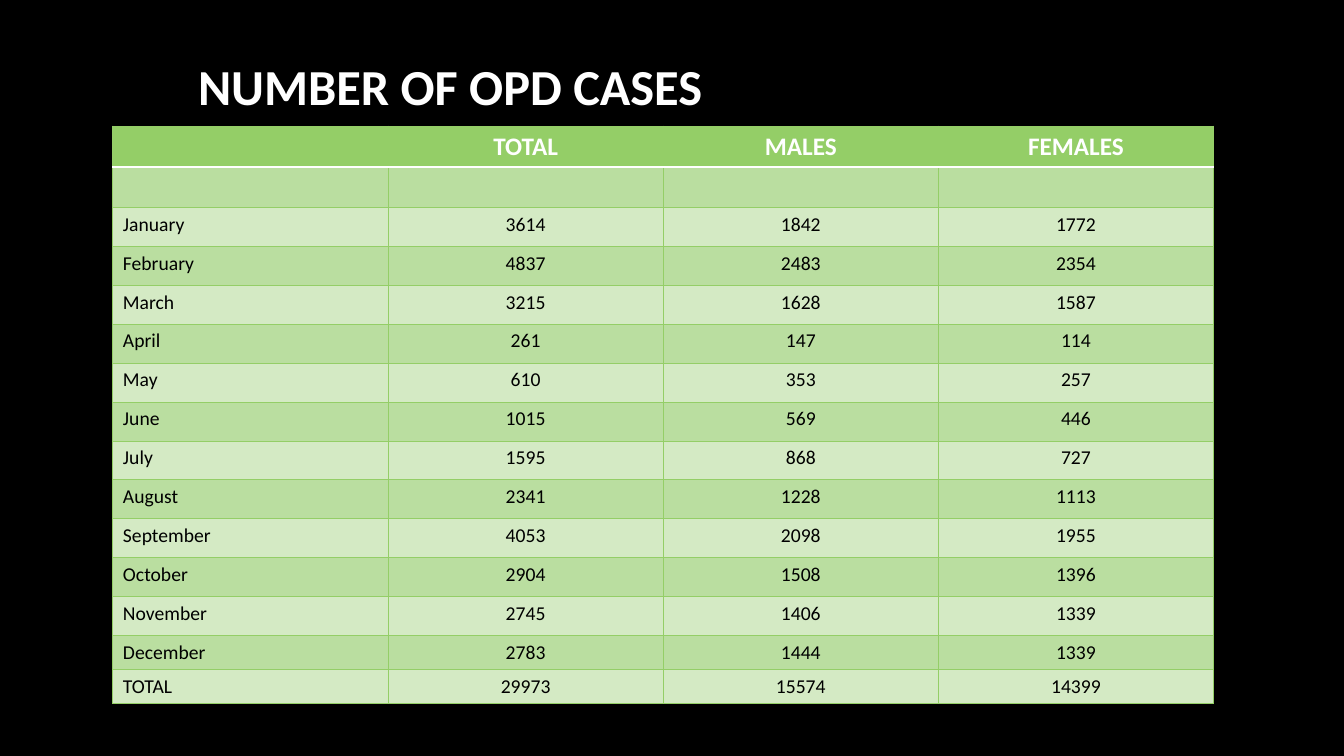
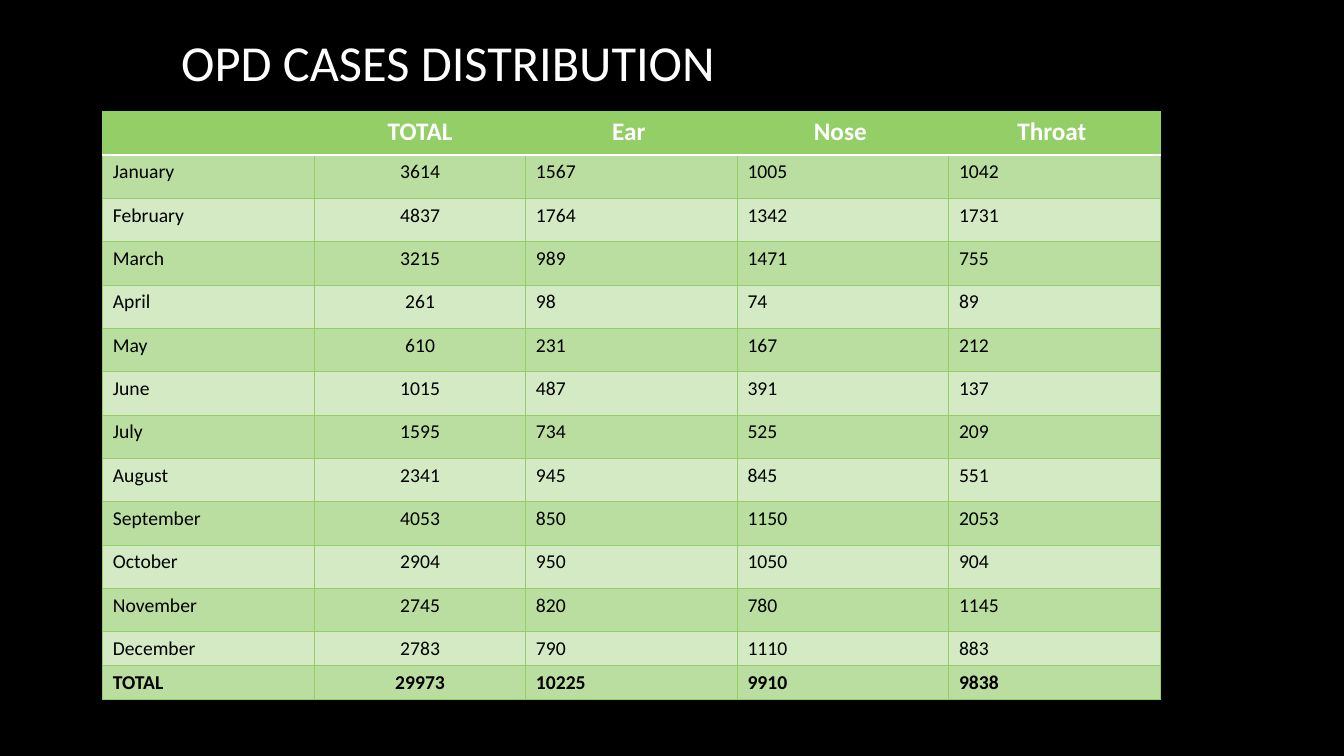
from lxml.etree import SubElement
from pptx import Presentation
from pptx.dml.color import RGBColor
from pptx.enum.text import MSO_ANCHOR as Anchor, PP_ALIGN as Align
from pptx.oxml.ns import qn
from pptx.util import Inches, Pt

MONTHS = ["January", "February", "March", "April", "May", "June", "July",
          "August", "September", "October", "November", "December"]
TOTALS = [3614, 4837, 3215, 261, 610, 1015, 1595, 2341, 4053, 2904, 2745, 2783]
MALES = [1842, 2483, 1628, 147, 353, 569, 868, 1228, 2098, 1508, 1406, 1444]
FEMALES = [1772, 2354, 1587, 114, 257, 446, 727, 1113, 1955, 1396, 1339, 1339]
EAR = [1567, 1764, 989, 98, 231, 487, 734, 945, 850, 950, 820, 790]
NOSE = [1005, 1342, 1471, 74, 167, 391, 525, 845, 1150, 1050, 780, 1110]
THROAT = [1042, 1731, 755, 89, 212, 137, 209, 551, 2053, 904, 1145, 883]


def color(value):
    return RGBColor.from_string(value)


class Deck:
    FONT = "Calibri"
    BACKGROUND, WHITE, INK = "000000", "FFFFFF", "000000"
    GREEN, BANDS = "94CE67", ("BADEA0", "D4EAC4")
    CLOSING_ROW = 4.5

    def __init__(self):
        self.show = Presentation()
        self.show.slide_width = Inches(13.33)
        self.show.slide_height = Inches(7.5)
        self.slide = None

    def x(self, percent):
        return round(self.show.slide_width * percent / 100)

    def y(self, percent):
        return round(self.show.slide_height * percent / 100)

    def place(self, left, top, width, height):
        return self.x(left), self.y(top), self.x(width), self.y(height)

    def new_slide(self):
        self.slide = self.show.slides.add_slide(self.show.slide_layouts[6])
        fill = self.slide.background.fill
        fill.solid()
        fill.fore_color.rgb = color(self.BACKGROUND)

    def style(self, paragraph, size, ink, bold, align=Align.LEFT):
        paragraph.alignment = align
        for run in paragraph.runs:
            run.font.name = self.FONT
            run.font.size = Pt(size)
            run.font.bold = bold
            run.font.color.rgb = color(ink)

    def title(self, text, place, bold=False):
        frame = self.slide.shapes.add_textbox(*self.place(*place)).text_frame
        frame.word_wrap = True
        frame.vertical_anchor = Anchor.MIDDLE
        frame.text = text
        self.style(frame.paragraphs[0], 36, self.WHITE, bold)

    def border(self, cell, side, value, points):
        line = SubElement(cell._tc.get_or_add_tcPr(), qn(f"a:ln{side}"), w=str(Pt(points)))
        SubElement(SubElement(line, qn("a:solidFill")), qn("a:srgbClr"), val=value)

    def cell(self, cell, text, row, align, bold):
        heading = row == 0
        cell.text = str(text)
        self.style(cell.text_frame.paragraphs[0], 18 if heading else 14,
                   self.WHITE if heading else self.INK, bold, align)
        rule = {"T": row == 1, "B": heading}
        for side in "LRTB":
            white = rule.get(side, False)
            self.border(cell, side, self.WHITE if white else self.GREEN, 1.5 if white else 0.75)
        cell.fill.solid()
        cell.fill.fore_color.rgb = color(self.GREEN if heading else self.BANDS[(row - 1) % 2])

    def table(self, records, place, centered, opening_rows=(), bold_total=False):
        last = len(records) - 1
        grid = self.slide.shapes.add_table(
            len(records), len(records[0]), *self.place(*place)).table
        even_count = len(records) - len(opening_rows) - 2
        even = (place[3] - sum(opening_rows) - 2 * self.CLOSING_ROW) / even_count
        heights = [*opening_rows, *[even] * even_count, *[self.CLOSING_ROW] * 2]
        for row, (record, height) in enumerate(zip(records, heights)):
            grid.rows[row].height = self.y(height)
            bold = row == 0 or (row == last and bold_total)
            for column, text in enumerate(record):
                middle = column in centered or row == 0
                self.cell(grid.cell(row, column), text, row,
                          Align.CENTER if middle else Align.LEFT, bold)


def monthly(*series):
    return [*zip(MONTHS, *series), ("TOTAL", *map(sum, series))]


def main():
    deck = Deck()

    deck.new_slide()
    deck.title("NUMBER OF OPD CASES", (14, 4.4, 76.2, 13.7), bold=True)
    cases = [("", "TOTAL", "MALES", "FEMALES"), ("",) * 4, *monthly(TOTALS, MALES, FEMALES)]
    deck.table(cases, (8.4, 16.67, 81.9, 76.4), centered=(1, 2, 3), opening_rows=(5.4, 5.4))

    deck.new_slide()
    deck.title("OPD CASES DISTRIBUTION", (12.75, 2.27, 76, 11.6))
    distribution = [("", "TOTAL", "Ear ", "Nose ", "Throat "),
                    *monthly(TOTALS, EAR, NOSE, THROAT)]
    distribution[-1] = ("TOTAL", 29973, 10225, 9910, 9838)
    deck.table(distribution, (7.65, 14.8, 78.7, 77.85), centered=(1,), bold_total=True)

    deck.show.save("out.pptx")


if __name__ == "__main__":
    main()
